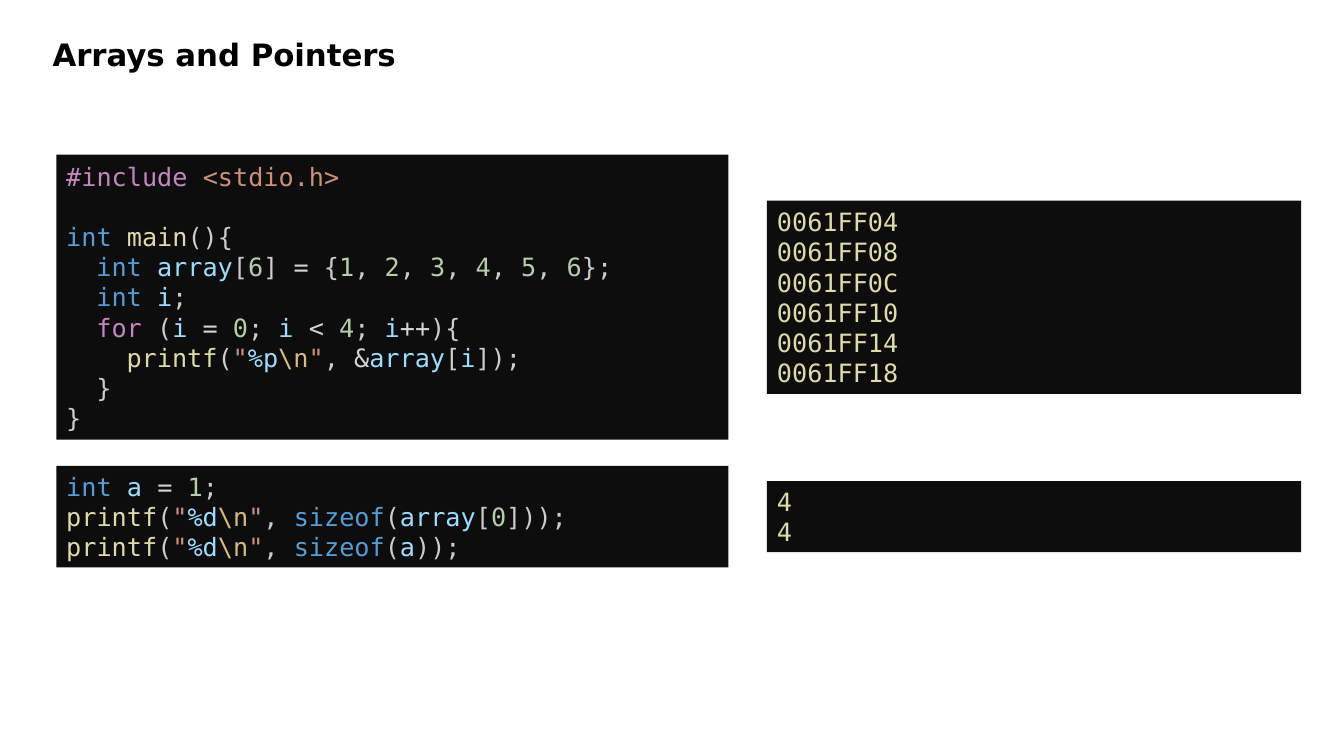
from pptx import Presentation
from pptx.dml.color import RGBColor
from pptx.enum.shapes import MSO_SHAPE
from pptx.enum.text import MSO_ANCHOR, PP_ALIGN
from pptx.util import Cm, Pt

BLACK = RGBColor(0x00, 0x00, 0x00)
PANEL = RGBColor(0x0D, 0x0D, 0x0D)
PLAIN = RGBColor(0xCC, 0xCC, 0xCC)
OPERATOR = RGBColor(0xD4, 0xD4, 0xD4)
CONTROL = RGBColor(0xC5, 0x86, 0xC0)
STRING = RGBColor(0xCE, 0x91, 0x78)
KEYWORD = RGBColor(0x56, 0x9C, 0xD6)
FUNCTION = RGBColor(0xDC, 0xDC, 0xAA)
VARIABLE = RGBColor(0x9C, 0xDC, 0xFE)
NUMBER = RGBColor(0xB5, 0xCE, 0xA8)
ESCAPE = RGBColor(0xD7, 0xBA, 0x7D)

TOKENS = {
    CONTROL: ["#include", "for"],
    STRING: ["<stdio.h>", '"'],
    KEYWORD: ["int", "sizeof"],
    FUNCTION: ["main", "printf"],
    VARIABLE: ["array", "i", "a", "%p", "%d"],
    ESCAPE: [r"\n"],
    OPERATOR: ["=", "<", "++", "&"],
    NUMBER: list("0123456"),
}
COLORS = {token: color for color, tokens in TOKENS.items() for token in tokens}

LINE_H = 0.77
INDENT = Cm(0.76)

ARRAY_CODE = [
    (0, "#include |<stdio.h>"),
    (0, "int |main|(){"),
    (1, "int |array|[|6|] |=| {|1|, |2|, |3|, |4|, |5|, |6|};"),
    (1, "int |i|;"),
    (1, "for| (|i |= |0|; |i |< |4|; |i|++|){"),
    (2, r'printf|(|"|%p|\n|"|, |&|array|[|i|]);'),
    (1, "}"),
    (0, "}"),
]
SIZE_CODE = [
    (0, "int |a |= |1|;"),
    (0, r'printf|(|"|%d|\n|"|, |sizeof|(|array|[|0|]));'),
    (0, r'printf|(|"|%d|\n|"|, |sizeof|(|a|));'),
]
ADDRESSES = [(0, f"0061FF{end}") for end in ("04", "08", "0C", "10", "14", "18")]
SIZES = [(0, "4"), (0, "4")]

prs = Presentation()
prs.slide_width, prs.slide_height = Cm(33.87), Cm(19.05)
s = prs.slides.add_slide(prs.slide_layouts[5])

title = s.shapes.title
title.left, title.top, title.width, title.height = Cm(1.07), Cm(0), Cm(31.93), Cm(1.96)
tf = title.text_frame
tf.text = "Arrays and Pointers"
tf.vertical_anchor = MSO_ANCHOR.BOTTOM
p = tf.paragraphs[0]
p.alignment = PP_ALIGN.LEFT
font = p.runs[0].font
font.name, font.size, font.bold = "DejaVu Sans", Pt(22), True
font.color.rgb = BLACK


def add_panel(left, middle, width, lines, rows, colors, default):
    height = 0.25 + LINE_H * rows
    sp = s.shapes.add_shape(MSO_SHAPE.RECTANGLE, Cm(left), Cm(middle - height / 2),
                            Cm(width), Cm(height))
    sp.shadow.inherit = False
    sp.fill.solid()
    sp.fill.fore_color.rgb = PANEL
    sp.line.fill.background()
    tf = sp.text_frame
    tf.word_wrap = True
    tf.vertical_anchor = MSO_ANCHOR.MIDDLE
    for n, (level, line) in enumerate(lines):
        p = tf.add_paragraph() if n else tf.paragraphs[0]
        p.alignment = PP_ALIGN.LEFT
        if level:
            p._p.get_or_add_pPr().set("marL", str(INDENT * level))
        for token in line.split("|"):
            r = p.add_run()
            r.text = token
            r.font.name, r.font.size = "DejaVu Sans Mono", Pt(18)
            r.font.color.rgb = colors.get(token.strip(), default)
    return sp


for middle, code, rows, output in [
    (7.49, ARRAY_CODE, 9, ADDRESSES),
    (13.02, SIZE_CODE, 3, SIZES),
]:
    sp = add_panel(1.42, middle, 16.94, code, rows, COLORS, PLAIN)
    if code is ARRAY_CODE:
        sp.text_frame.paragraphs[1].space_before = Pt(21)
    add_panel(19.33, middle, 13.46, output, len(output), {}, FUNCTION)

prs.save("out.pptx")
